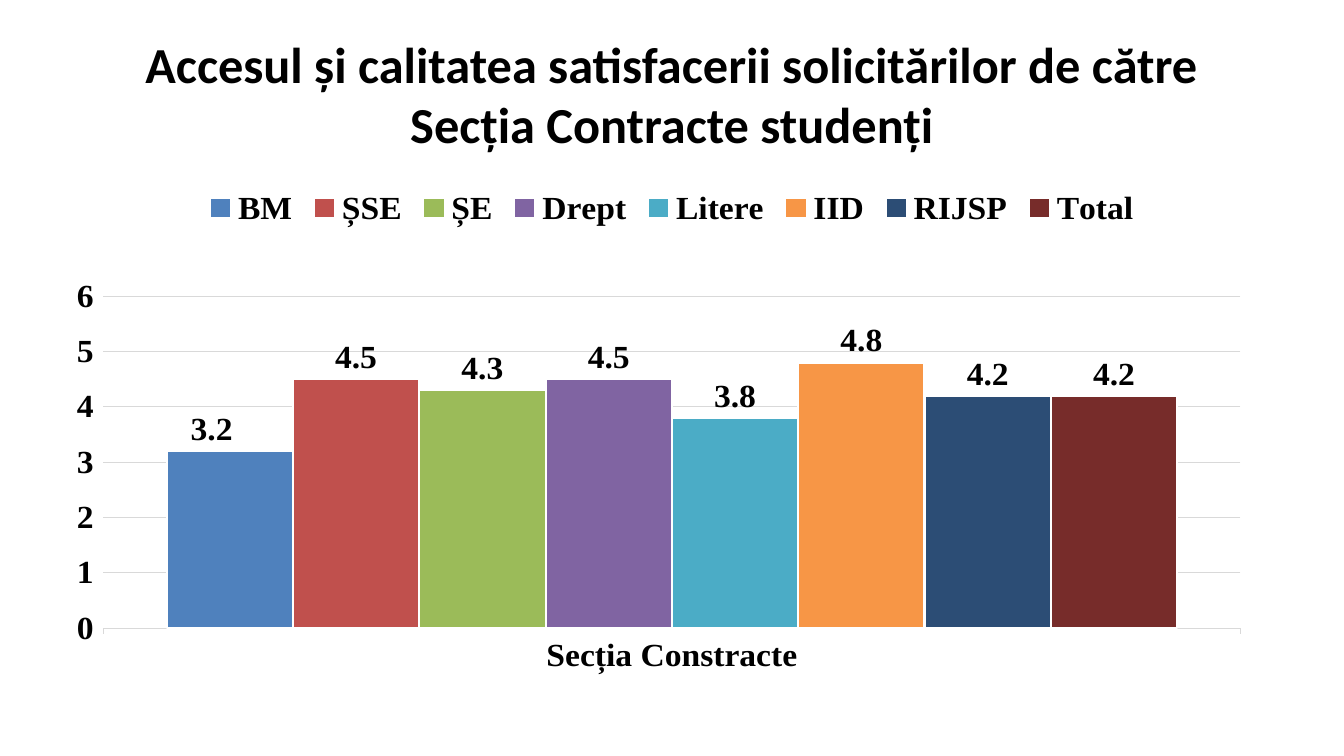
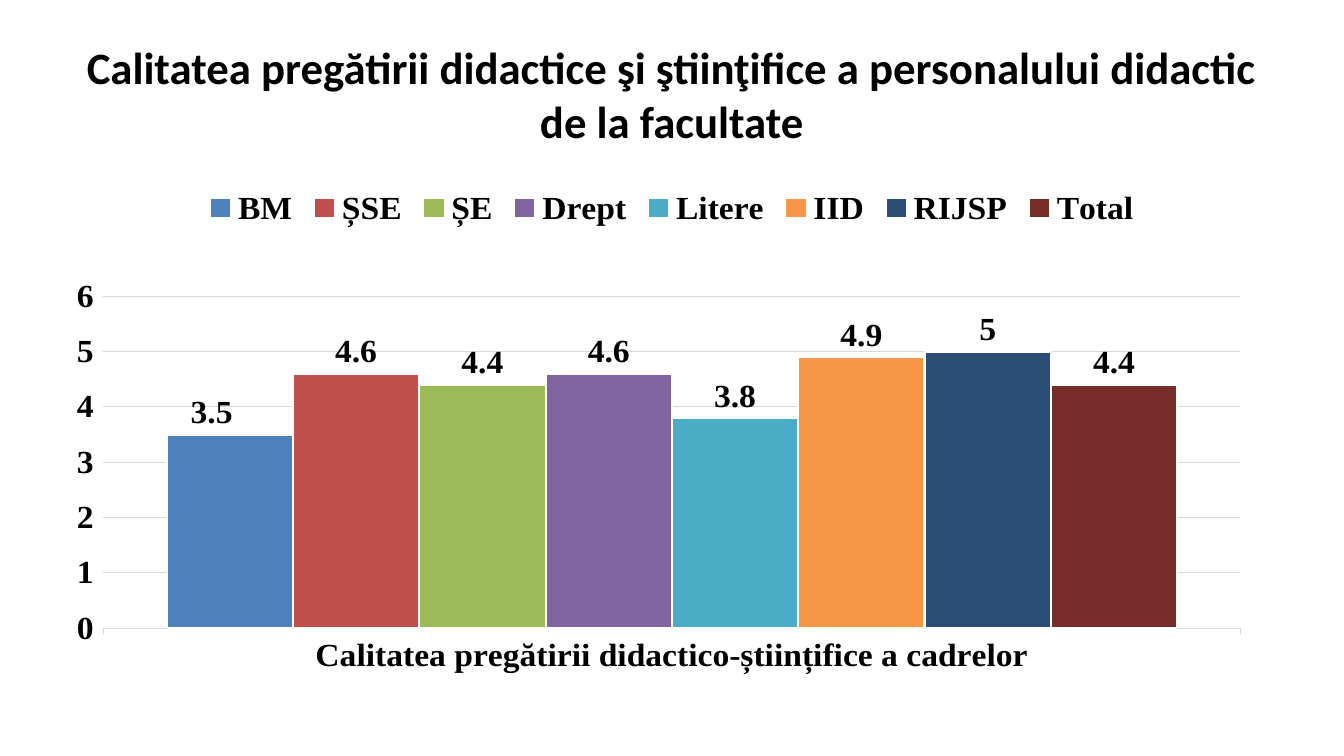
import dataclasses

import pptx
import pptx.chart.data
import pptx.dml.color
import pptx.enum.chart
import pptx.enum.text
import pptx.oxml
import pptx.oxml.ns
import pptx.util


@dataclasses.dataclass(frozen=True)
class Theme:
    text: str = "000000"
    grid: str = "D9D9D9"
    bar_edge: str = "FFFFFF"
    bars: tuple = ("4F81BD", "C0504D", "9BBB59", "8064A2",
                   "4BACC6", "F79646", "2C4D75", "772C2A")
    title_font: str = "Calibri"
    chart_font: str = "Times New Roman"
    chart_size: int = 24
    grid_width: float = 0.75
    edge_width: float = 1.5


# Boxes in px: left, top, width, height
SLIDE_SIZE = (1280, 720)
TITLE_BOX = (64, 29, 1152, 120)
CHART_BOX = (64, 168, 1152, 475)
# Fractions of the chart box
PLOT_LAYOUT = {"layoutTarget": "inner", "xMode": "edge", "yMode": "edge",
               "x": 0.03, "y": 0.251, "w": 0.94, "h": 0.695}
FIRST_LABEL_LAYOUT = {"x": -0.015, "y": 0}

FACULTIES = ("BM", "ȘSE", "ȘE", "Drept", "Litere", "IID", "RIJSP", "Total")
SURVEYS = (
    ("Accesul și calitatea satisfacerii solicitărilor de către Secția Contracte studenți",
     36, "Secția Constracte", (3.2, 4.5, 4.3, 4.5, 3.8, 4.8, 4.2, 4.2)),
    ("Calitatea pregătirii didactice şi ştiinţifice a personalului didactic de la facultate",
     32, "Calitatea pregătirii didactico-științifice a cadrelor",
     (3.5, 4.6, 4.4, 4.6, 3.8, 4.9, 5, 4.4)),
)


def px(length):
    return pptx.util.Emu(length * 9525)


def color(value):
    return pptx.dml.color.RGBColor.from_string(value)


def manual_layout(settings):
    """Build a chart layout element from its settings."""
    namespace = pptx.oxml.ns.nsdecls("c")
    parts = "".join(f'<c:{name} val="{value}"/>' for name, value in settings.items())
    return pptx.oxml.parse_xml(
        f"<c:layout {namespace}><c:manualLayout>{parts}</c:manualLayout></c:layout>")


class Deck:
    def __init__(self, theme):
        self.theme = theme
        self.presentation = pptx.Presentation()
        self.presentation.slide_width, self.presentation.slide_height = map(px, SLIDE_SIZE)
        self.slide = None

    def add_slide(self):
        self.slide = self.presentation.slides.add_slide(self.presentation.slide_layouts[5])

    def style_font(self, font, name, size):
        font.name = name
        font.size = pptx.util.Pt(size)
        font.bold = True
        font.color.rgb = color(self.theme.text)

    def style_chart_font(self, font):
        self.style_font(font, self.theme.chart_font, self.theme.chart_size)

    def style_line(self, line, value, width):
        line.color.rgb = color(value)
        line.width = pptx.util.Pt(width)

    def title(self, text, size):
        shape = self.slide.shapes.title
        shape.left, shape.top, shape.width, shape.height = map(px, TITLE_BOX)
        frame = shape.text_frame
        frame.word_wrap = True
        frame.auto_size = pptx.enum.text.MSO_AUTO_SIZE.NONE
        frame.vertical_anchor = pptx.enum.text.MSO_ANCHOR.MIDDLE
        paragraph = frame.paragraphs[0]
        paragraph.alignment = pptx.enum.text.PP_ALIGN.CENTER
        run = paragraph.add_run()
        run.text = text
        self.style_font(run.font, self.theme.title_font, size)

    def column_chart(self, category, names, values):
        data = pptx.chart.data.CategoryChartData()
        data.categories = [category]
        for name, value in zip(names, values):
            data.add_series(name, [value])
        chart = self.slide.shapes.add_chart(
            pptx.enum.chart.XL_CHART_TYPE.COLUMN_CLUSTERED,
            *map(px, CHART_BOX), data).chart
        chart.has_title = False
        self.style_chart_font(chart.font)

        # Legend
        chart.has_legend = True
        chart.legend.position = pptx.enum.chart.XL_LEGEND_POSITION.TOP
        chart.legend.include_in_layout = False
        self.style_chart_font(chart.legend.font)

        self.axes(chart)
        self.columns(chart.plots[0])

        # Plot area
        plot_area = chart.plots[0]._element.getparent()
        for layout in plot_area.findall(pptx.oxml.ns.qn("c:layout")):
            plot_area.remove(layout)
        plot_area.insert(0, manual_layout(PLOT_LAYOUT))

    def axes(self, chart):
        theme = self.theme
        for axis in (chart.category_axis, chart.value_axis):
            axis.major_tick_mark = pptx.enum.chart.XL_TICK_MARK.OUTSIDE
            axis.minor_tick_mark = pptx.enum.chart.XL_TICK_MARK.NONE
            self.style_chart_font(axis.tick_labels.font)
        self.style_line(chart.category_axis.format.line, theme.grid, theme.grid_width)
        value_axis = chart.value_axis
        value_axis.minimum_scale, value_axis.maximum_scale = 0, 6
        value_axis.major_unit = 1
        value_axis.format.line.fill.background()
        value_axis.has_major_gridlines = True
        self.style_line(value_axis.major_gridlines.format.line, theme.grid, theme.grid_width)

    def columns(self, plot):
        theme = self.theme
        outside = pptx.enum.chart.XL_LABEL_POSITION.OUTSIDE_END
        plot.gap_width = 100
        plot.overlap = 0
        plot.vary_by_categories = False
        for series, fill in zip(plot.series, theme.bars):
            series.format.fill.solid()
            series.format.fill.fore_color.rgb = color(fill)
            self.style_line(series.format.line, theme.bar_edge, theme.edge_width)
            labels = series.data_labels
            labels.show_value = True
            labels.position = outside
            self.style_chart_font(labels.font)

        # The first label sits a little left of its column
        first = plot.series[0]
        label = first.points[0].data_label
        label.position = outside
        self.style_chart_font(label.font)
        index = first._element.find(
            "/".join(map(pptx.oxml.ns.qn, ("c:dLbls", "c:dLbl", "c:idx"))))
        index.addnext(manual_layout(FIRST_LABEL_LAYOUT))


def main():
    deck = Deck(Theme())
    for title, size, category, values in SURVEYS:
        deck.add_slide()
        deck.title(title, size)
        deck.column_chart(category, FACULTIES, values)
    deck.presentation.save("out.pptx")


if __name__ == "__main__":
    main()
